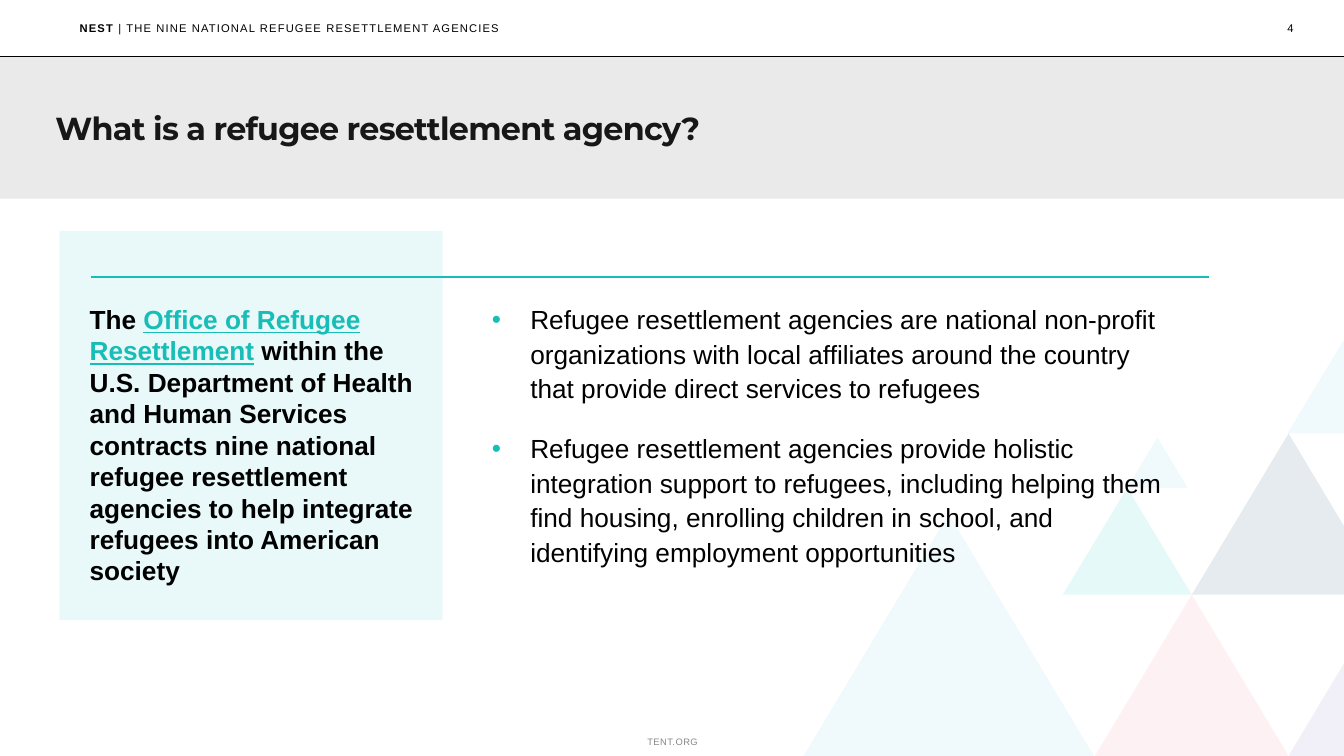
from lxml.etree import SubElement
from pptx import Presentation
from pptx.dml.color import RGBColor
from pptx.enum.shapes import MSO_CONNECTOR, MSO_SHAPE
from pptx.enum.text import MSO_ANCHOR as Anchor, MSO_AUTO_SIZE as AutoSize, PP_ALIGN as Align
from pptx.oxml.ns import qn
from pptx.util import Emu, Pt

PX = 9144  # one hundredth of an inch
WIDTH, HEIGHT = 1333, 750
HEADER = 56
SLOPE = 0.6  # half base of a triangle per unit of height
BLACK, TEAL, SKY = "000000", "18BDB7", "72CCE0"


def px(length):
    return Emu(round(length * PX))


def color(hex_string):
    return RGBColor.from_string(hex_string)


class SlideBuilder:
    font = "Arial"

    def __init__(self, presentation):
        self.slide = presentation.slides.add_slide(presentation.slide_layouts[6])
        self.shapes = self.slide.shapes

    def paint(self, shape, fill, opacity=100):
        shape.shadow.inherit = False
        shape.fill.solid()
        shape.fill.fore_color.rgb = color(fill)
        shape.line.fill.background()
        if opacity < 100:
            fill_color = shape._element.spPr.find(qn("a:solidFill"))[0]
            SubElement(fill_color, qn("a:alpha"), val=str(opacity * 1000))

    def rectangle(self, left, top, width, height, fill):
        shape = self.shapes.add_shape(
            MSO_SHAPE.RECTANGLE, px(left), px(top), px(width), px(height))
        self.paint(shape, fill)

    def triangle(self, apex, top, bottom, fill):
        """Draw an upright triangle, cut off at the right slide edge."""
        half = round((bottom - top) * SLOPE)
        points = [(apex - half, bottom)]
        if apex + half > WIDTH:
            cut = top + round((WIDTH - apex) / SLOPE)
            points += [(WIDTH, bottom), (WIDTH, cut)]
        else:
            points.append((apex + half, bottom))
        builder = self.shapes.build_freeform(apex, top, scale=PX)
        builder.add_line_segments(points, close=True)
        self.paint(builder.convert_to_shape(), fill, opacity=10)

    def rule(self, left, right, y, line_color, weight):
        line = self.shapes.add_connector(
            MSO_CONNECTOR.STRAIGHT, px(left), px(y), px(right), px(y))
        line.line.color.rgb = color(line_color)
        line.line.width = Pt(weight)
        SubElement(line._element.spPr, qn("a:effectLst"))

    def text_box(self, left, top, width, height, anchor=Anchor.MIDDLE, inset=(0, 0)):
        box = self.shapes.add_textbox(px(left), px(top), px(width), px(height))
        frame = box.text_frame
        frame.word_wrap = True
        frame.vertical_anchor = anchor
        frame.margin_left = frame.margin_right = px(inset[0])
        frame.margin_top = frame.margin_bottom = px(inset[1])
        return frame

    def run(self, paragraph, text, size, text_color=BLACK, bold=False,
            underline=False, spacing=0, font=None):
        run = paragraph.add_run()
        run.text = text
        run.font.name = font or self.font
        run.font.size = Pt(size)
        run.font.bold = bold
        run.font.underline = underline
        run.font.color.rgb = color(text_color)
        if spacing:
            run._r.get_or_add_rPr().set("spc", str(round(spacing * 100)))

    def bullets(self, frame, items, size):
        for index, item in enumerate(items):
            paragraph = frame.paragraphs[0] if index == 0 else frame.add_paragraph()
            paragraph.line_spacing = 1.1
            paragraph.space_before = Pt(12 if index else 0)
            paragraph.space_after = Pt(6)
            properties = paragraph._p.get_or_add_pPr()
            properties.set("marL", str(px(38)))
            properties.set("indent", str(-px(38)))
            bullet_color = SubElement(properties, qn("a:buClr"))
            SubElement(bullet_color, qn("a:srgbClr"), val=TEAL)
            SubElement(properties, qn("a:buFont"), typeface=self.font)
            SubElement(properties, qn("a:buChar"), char="•")
            self.run(paragraph, item, size)


def main():
    presentation = Presentation()
    presentation.slide_width, presentation.slide_height = px(WIDTH), px(HEIGHT)
    page = SlideBuilder(presentation)

    # Footer and title band
    footer = page.text_box(642, 730, 91, 12)
    page.run(footer.paragraphs[0], "TENT.ORG", 6.7, "878787", spacing=0.3)
    page.rectangle(0, HEADER, WIDTH, 141, "EAEAEA")

    # Triangle pattern: apex, top, bottom, colour
    for triangle in [
        (1182, 590, HEIGHT, "FC7A99"),
        (941, 510, HEIGHT, SKY),
        (WIDTH, 658, HEIGHT, "776DBC"),
        (1278, 430, 590, "05426B"),
        (1118, 484, 590, "00C6C4"),
        (WIDTH, 337, 430, SKY),
        (1148, 434, 484, SKY),
    ]:
        page.triangle(*triangle)

    # Header line, callout panel and title
    page.rule(0, WIDTH, HEADER, BLACK, 0.25)
    page.rectangle(59, 229, 380, 386, "E9F9F9")
    title = page.text_box(55, HEADER, 1155, 141)
    page.run(title.paragraphs[0], "What is a refugee resettlement agency?", 22.7,
             "171717", bold=True, spacing=-0.5, font="Montserrat")

    # Bullet list
    body = page.text_box(488, 298, 677, 297, Anchor.TOP)
    page.bullets(body, [
        "Refugee resettlement agencies are national non-profit organizations with "
        "local affiliates around the country that provide direct services to refugees",
        "Refugee resettlement agencies provide holistic integration support to "
        "refugees, including helping them find housing, enrolling children in school, "
        "and identifying employment opportunities",
    ], 18.7)

    # Header text and page number
    number = page.text_box(972, 0, 311, HEADER).paragraphs[0]
    number.alignment = Align.RIGHT
    page.run(number, "4", 8)
    header = page.text_box(79, 0, 471, HEADER).paragraphs[0]
    page.run(header, "NEST ", 8, bold=True, spacing=0.8)
    page.run(header, "| THE NINE NATIONAL REFUGEE RESETTLEMENT AGENCIES", 8, spacing=0.8)

    # Callout text
    callout = page.text_box(79, 296, 349, 324, Anchor.TOP, inset=(10, 5))
    callout.auto_size = AutoSize.SHAPE_TO_FIT_TEXT
    statement = callout.paragraphs[0]
    page.run(statement, "The ", 18.7, bold=True)
    page.run(statement, "Office of Refugee Resettlement", 18.7, TEAL, bold=True, underline=True)
    page.run(statement, " within the U.S. Department of Health and Human Services contracts "
             "nine national refugee resettlement agencies to help integrate refugees "
             "into American society", 18.7, bold=True)
    page.rule(90, 1199, 275, TEAL, 1.5)

    presentation.save("out.pptx")


if __name__ == "__main__":
    main()
